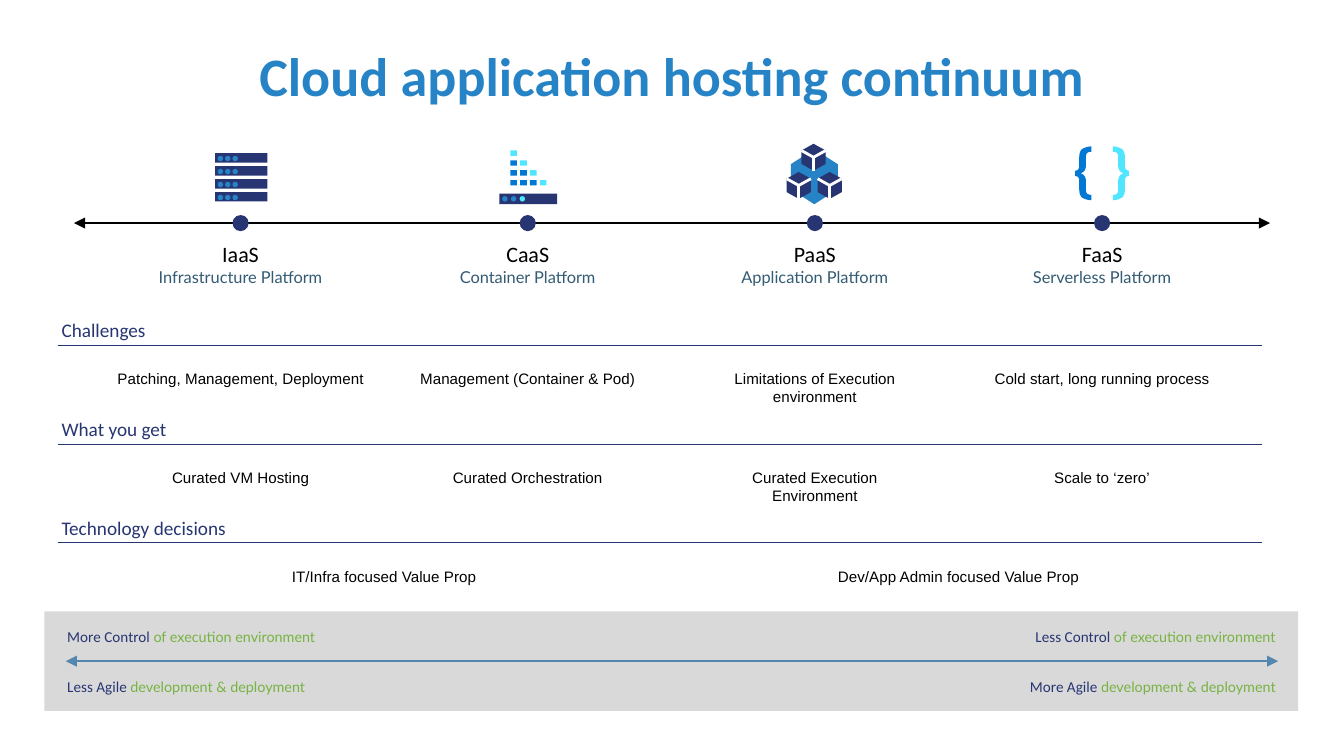
from lxml import etree
from pptx import Presentation
from pptx.dml.color import RGBColor
from pptx.enum import shapes, text
from pptx.oxml import ns
from pptx.util import Inches, Pt

# Colours
NAVY = RGBColor(0x27, 0x35, 0x73)
BLUE = RGBColor(0x26, 0x83, 0xC6)
AZURE = RGBColor(0x00, 0x78, 0xD4)
CYAN = RGBColor(0x50, 0xE6, 0xFF)
SLATE = RGBColor(0x33, 0x5B, 0x74)
STEEL = RGBColor(0x55, 0x86, 0xB0)
GREEN = RGBColor(0x77, 0xB3, 0x42)
GREY = RGBColor(0xD9, 0xD9, 0xD9)
BLACK = RGBColor(0, 0, 0)
WHITE = RGBColor(255, 255, 255)

RECT, OVAL = shapes.MSO_SHAPE.RECTANGLE, shapes.MSO_SHAPE.OVAL
LEFT, CENTER, RIGHT = text.PP_ALIGN.LEFT, text.PP_ALIGN.CENTER, text.PP_ALIGN.RIGHT

# Content
TITLE = "Cloud application hosting continuum"
PLATFORMS = [  # name, description, box width
    ("IaaS", "Infrastructure Platform", 1.38),
    ("CaaS", "Container Platform", 1.18),
    ("PaaS", "Application Platform", 1.27),
    ("FaaS", "Serverless Platform", 1.19),
]
SECTIONS = [  # heading, heading width, cells of (text, centre column, box width)
    ("Challenges", 1.13, [
        ("Patching, Management, Deployment", 0, 2.15),
        ("Management (Container & Pod)", 1, 2.04),
        ("Limitations of Execution environment", 2, 2.04),
        ("Cold start, long running process", 3, 1.81)]),
    ("What you get", 1.13, [
        ("Curated VM Hosting", 0, 1.42),
        ("Curated Orchestration", 1, 1.34),
        ("Curated Execution Environment", 2, 1.74),
        ("Scale to ‘zero’", 3, 0.97)]),
    ("Technology decisions", 1.57, [
        ("IT/Infra focused Value Prop", 0.5, 1.81),
        ("Dev/App Admin focused Value Prop", 2.5, 2.1)]),
]
TRADE_OFFS = [  # (lead, rest, box width) on the left and on the right
    [("More Control ", "of execution environment", 2.02),
     ("Less Control ", "of execution environment", 1.96)],
    [("Less Agile ", "development & deployment", 1.96),
     ("More Agile ", "development & deployment", 2.02)],
]

# Layout
FIRST_COLUMN, LAST_COLUMN = 1.79, 8.2
AXIS_Y, DOT = 1.66, 0.12
SECTION_TOP, SECTION_STEP = 2.32, 1.47 / 2
LABEL_MARGINS = dict(margin_left=Inches(0.07), margin_right=Inches(0.07),
                     margin_top=Inches(0.04), margin_bottom=Inches(0.04))


def column(index):
    return FIRST_COLUMN + index * (LAST_COLUMN - FIRST_COLUMN) / (len(PLATFORMS) - 1)


def set_all(target, values):
    for name, value in values.items():
        setattr(target, name, value)


def paint(shape, fill):
    shape.fill.solid()
    shape.fill.fore_color.rgb = fill
    shape.line.fill.background()
    shape.shadow.inherit = False
    return shape


def add_shape(parent, kind, left, top, width, height, fill):
    return paint(parent.add_shape(kind, *map(Inches, (left, top, width, height))), fill)


def add_outline(parent, points, fill, close=True):
    points = [(Inches(x), Inches(y)) for x, y in points]
    builder = parent.build_freeform(*points[0])
    builder.add_line_segments(points[1:], close=close)
    return paint(builder.convert_to_shape(), fill)


def add_line(parent, x1, y1, x2, y2, color, width, arrows=False):
    line = parent.add_connector(shapes.MSO_CONNECTOR.STRAIGHT,
                                *map(Inches, (x1, y1, x2, y2)))
    line.line.color.rgb = color
    line.line.width = Pt(width)
    if arrows:
        outline = line._element.spPr.find(ns.qn("a:ln"))
        for end in ("a:headEnd", "a:tailEnd"):
            etree.SubElement(outline, ns.qn(end), type="triangle")
    etree.SubElement(line._element.spPr, ns.qn("a:effectLst"))


def add_runs(paragraph, runs, align):
    paragraph.alignment = align
    for words, size, font, color, *bold in runs:
        run = paragraph.add_run()
        run.text = words
        set_all(run.font, dict(size=Pt(size), name=font, bold=bool(bold)))
        run.font.color.rgb = color


def add_text(parent, left, top, width, height, lines, align=LEFT, wrap=True, **margins):
    frame = parent.add_textbox(*map(Inches, (left, top, width, height))).text_frame
    set_all(frame, dict(word_wrap=wrap, auto_size=text.MSO_AUTO_SIZE.SHAPE_TO_FIT_TEXT,
                        **margins))
    for index, runs in enumerate(lines):
        paragraph = frame.add_paragraph() if index else frame.paragraphs[0]
        add_runs(paragraph, runs, align)


# Icons, each centred on x
def draw_servers(icon, x):
    for row in range(4):
        top = 1.14 + row * 0.29 / 3
        add_shape(icon, RECT, x - 0.19, top, 0.39, 0.07, NAVY)
        for light in range(3):
            add_shape(icon, OVAL, x - 0.17 + light * 0.11 / 2, top + 0.02, 0.04, 0.04, BLUE)


def draw_containers(icon, x):
    add_shape(icon, RECT, x - 0.21, 1.44, 0.43, 0.08, NAVY)
    for light, color in enumerate((BLUE, BLUE, CYAN)):
        add_shape(icon, OVAL, x - 0.19 + light * 0.13 / 2, 1.46, 0.04, 0.04, color)
    step = 0.22 / 3
    for row in range(4):
        for tile in range(row + 1):
            add_shape(icon, RECT, x - 0.13 + tile * step, 1.12 + row * step, 0.05, 0.04,
                      CYAN if tile == row else AZURE)


def draw_cubes(icon, x):
    hexagon = add_shape(icon, shapes.MSO_SHAPE.HEXAGON, x - 0.21, 1.14, 0.41, 0.35, BLUE)
    hexagon.adjustments[0] = 0.32
    hexagon.rotation = 90
    for offset, top in ((0.11, 1.28), (-0.12, 1.28), (-0.01, 1.07)):
        middle = x + offset
        left, right = middle - 0.09, middle + 0.09
        add_outline(icon, [(left, top + 0.05), (middle, top), (right, top + 0.05),
                           (right, top + 0.15), (middle, top + 0.2), (left, top + 0.15)], NAVY)
        edge = add_outline(icon, [(right, top + 0.05), (middle, top + 0.1),
                                  (left, top + 0.05)], NAVY, close=False)
        edge.line.color.rgb = WHITE
        edge.line.width = Pt(1.5)
        add_line(icon, middle, top + 0.1, middle, top + 0.2, WHITE, 1.5)


def curve(a, b, c, d, steps=6):
    weights = [((1 - t) ** 3, 3 * t * (1 - t) ** 2, 3 * t * t * (1 - t), t ** 3)
               for t in (step / steps for step in range(steps + 1))]
    return [tuple(sum(w * p[axis] for w, p in zip(weight, (a, b, c, d)))
                  for axis in (0, 1)) for weight in weights]


def draw_braces(icon, x):
    # Upper half of a brace: distance from the icon centre, height above its middle
    outer = (curve((0.08, 0.2), (0.11, 0.2), (0.13, 0.19), (0.15, 0.18))
             + curve((0.15, 0.18), (0.16, 0.17), (0.17, 0.15), (0.17, 0.12))
             + curve((0.17, 0.06), (0.17, 0.03), (0.18, 0.02), (0.2, 0.02)))
    inner = (curve((0.16, 0), (0.13, 0.01), (0.12, 0.03), (0.12, 0.06))
             + curve((0.12, 0.12), (0.12, 0.15), (0.11, 0.16), (0.08, 0.16)))
    lower = [[(dx, -dy) for dx, dy in reversed(half)] for half in (outer, inner)]
    outline = outer + lower[0] + lower[1] + inner
    for side, color in ((-1, AZURE), (1, CYAN)):
        add_outline(icon, [(x + side * dx, 1.29 - dy) for dx, dy in outline], color)


def main():
    presentation = Presentation()
    presentation.slide_width = Inches(10)
    presentation.slide_height = Inches(10) * 9 // 16
    slide = presentation.slides.add_slide(presentation.slide_layouts[5])
    canvas = slide.shapes

    # Title
    title = canvas.title
    set_all(title, dict(left=Inches(0.5), top=Inches(0.25), width=Inches(9), height=Inches(0.62)))
    title.text_frame.vertical_anchor = text.MSO_ANCHOR.MIDDLE
    add_runs(title.text_frame.paragraphs[0], [(TITLE, 29, "Calibri", BLUE, True)], CENTER)

    # Continuum axis with icons and platform labels
    add_line(canvas, 0.55, AXIS_Y, 9.45, AXIS_Y, BLACK, 1.5, arrows=True)
    icons = (draw_servers, draw_containers, draw_cubes, draw_braces)
    for index, ((name, description, width), draw) in enumerate(zip(PLATFORMS, icons)):
        x = column(index)
        draw(canvas.add_group_shape().shapes, x)
        add_shape(canvas, OVAL, x - DOT / 2, AXIS_Y - DOT / 2, DOT, DOT, NAVY)
        add_text(canvas, x - width / 2, 1.75, width, 0.42,
                 [[(name, 11.8, "Calibri", BLACK)], [(description, 8.8, "Lato", SLATE)]],
                 CENTER, wrap=False, **LABEL_MARGINS)

    # Comparison sections
    for index, (heading, heading_width, cells) in enumerate(SECTIONS):
        top = SECTION_TOP + index * SECTION_STEP
        add_text(canvas, 0.36, top, heading_width, 0.27, [[(heading, 10.3, "Calibri", NAVY)]])
        add_line(canvas, 0.43, top + 0.25, 9.39, top + 0.25, NAVY, 0.5)
        for words, position, width in cells:
            add_text(canvas, column(position) - width / 2, top + 0.38, width, 0.24,
                     [[(words, 8.1, "Arial", BLACK)]], CENTER)

    # Trade-off band
    add_shape(canvas, RECT, 0.33, 4.55, 9.33, 0.74, GREY)
    add_line(canvas, 0.49, 4.92, 9.51, 4.92, STEEL, 1, arrows=True)
    for top, pair in zip((4.63, 5), TRADE_OFFS):
        for (lead, rest, width), align in zip(pair, (LEFT, RIGHT)):
            left = 0.43 if align == LEFT else 9.56 - width
            add_text(canvas, left, top, width, 0.21,
                     [[(lead, 8.1, "Calibri", NAVY), (rest, 7.7, "Lato", GREEN)]],
                     align, wrap=False, **LABEL_MARGINS)

    presentation.save("out.pptx")


if __name__ == "__main__":
    main()
